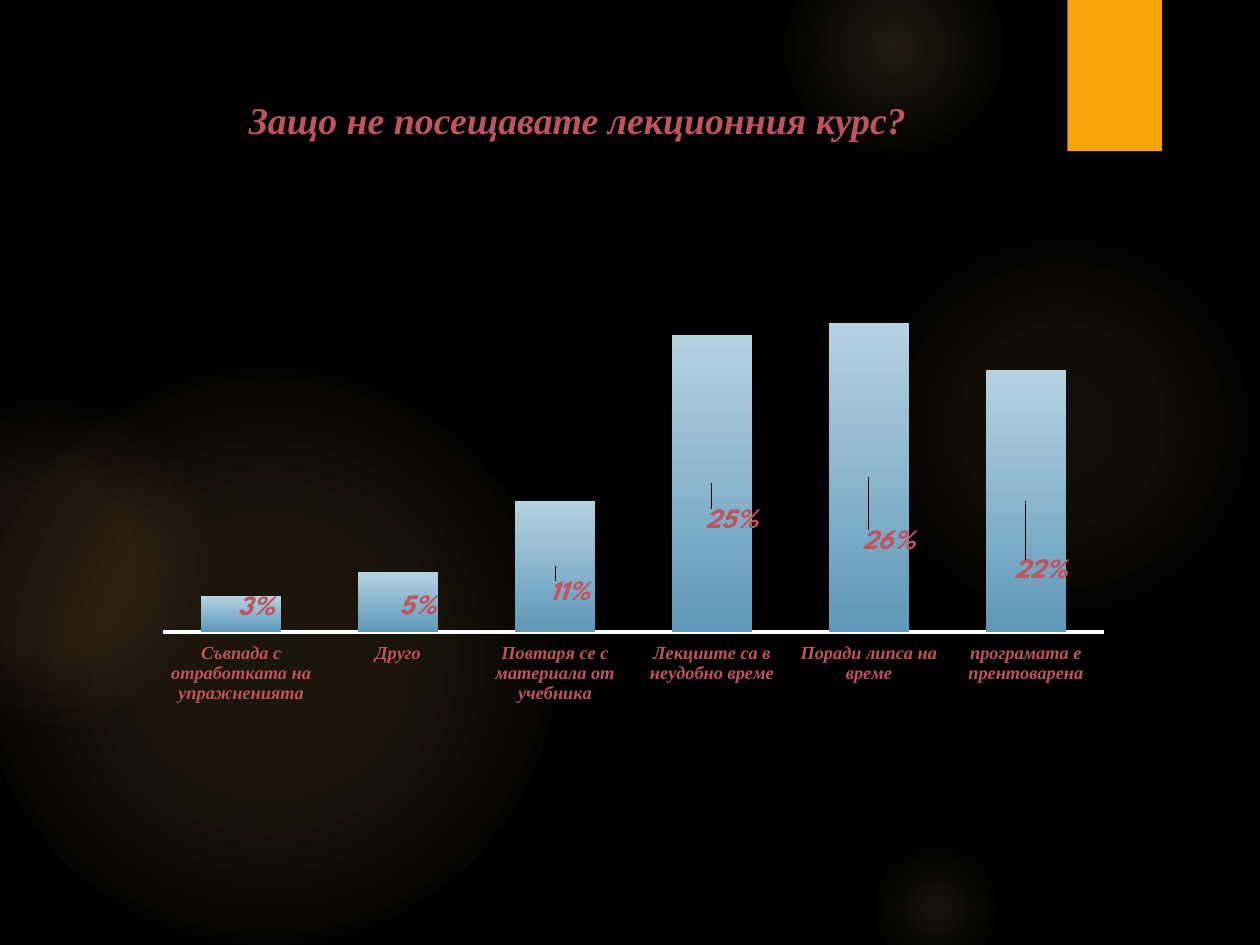
from dataclasses import dataclass

from pptx import Presentation
from pptx.chart.data import CategoryChartData
from pptx.dml.color import RGBColor
from pptx.enum.chart import XL_CHART_TYPE, XL_TICK_LABEL_POSITION, XL_TICK_MARK
from pptx.enum.shapes import MSO_SHAPE
from pptx.enum.text import MSO_ANCHOR, PP_ALIGN
from pptx.oxml import parse_xml
from pptx.oxml.ns import nsdecls
from pptx.util import Pt


@dataclass(frozen=True)
class Theme:
    background: str = "000000"
    accent: str = "F5A408"
    glow: str = "FAC96A"
    text: str = "C0545E"
    axis: str = "FFFFFF"
    bar_top: str = "B5D2E1"
    bar_bottom: str = "5F98B8"
    serif: str = "Times New Roman"
    display: str = "League Spartan"
    title_size: float = 21.6
    chart_size: float = 18
    label_size: float = 16
    category_size: float = 10.5


THEME = Theme()

# Left, top, diameter, then (position %, opacity %) from the centre outwards
GLOWS = [
    (496, 132, 222, [(0, 7), (36, 6), (69, 0)]),
    (448, -36, 126, [(0, 14), (36, 7), (73, 0)]),
    (496, 480, 78, [(0, 10), (31, 5), (66, 0)]),
    (-12, 210, 330, [(0, 11), (36, 10), (75, 0)]),
    (-66, 228, 186, [(0, 8), (36, 8), (72, 0)]),
]

# Reason, share, label offset as a fraction of the chart size
REASONS = [
    ("Съвпада с отработката на упражненията", 0.03, (0.015, -0.01)),
    ("Друго", 0.05, (0.02, 0.01)),
    ("Повтаря се с материала от учебника", 0.11, (0.015, 0.05)),
    ("Лекциите са в неудобно време", 0.25, (0.02, 0.07)),
    ("Поради липса на време", 0.26, (0.02, 0.12)),
    ("програмата е прентоварена", 0.22, (0.015, 0.13)),
]


def rgb(color):
    return RGBColor.from_string(color)


def style_font(font, name, size, color, emphasis=True):
    font.name = name
    font.size = Pt(size)
    font.color.rgb = rgb(color)
    font.bold = font.italic = emphasis


def manual_layout(**settings):
    parts = "".join(f'<c:{key} val="{value}"/>' for key, value in settings.items())
    return parse_xml(f'<c:layout {nsdecls("c")}><c:manualLayout>{parts}'
                     '</c:manualLayout></c:layout>')


def add_plain_shape(slide, kind, box):
    shape = slide.shapes.add_shape(kind, *map(Pt, box))
    shape.shadow.inherit = False
    shape.line.fill.background()
    return shape


def add_glow(slide, box, stops):
    glow = add_plain_shape(slide, MSO_SHAPE.OVAL, box)
    glow.fill.background()
    stop_xml = "".join(
        f'<a:gs pos="{position * 1000}"><a:srgbClr val="{THEME.glow}">'
        f'<a:alpha val="{opacity * 1000}"/></a:srgbClr></a:gs>'
        for position, opacity in stops)
    gradient = parse_xml(
        f'<a:gradFill {nsdecls("a")}><a:gsLst>{stop_xml}</a:gsLst><a:path path="circle">'
        '<a:fillToRect l="50000" t="50000" r="50000" b="50000"/></a:path></a:gradFill>')
    properties = glow.fill._xPr
    properties.replace(properties.xpath("./a:noFill")[0], gradient)


def add_backdrop(slide):
    slide.background.fill.solid()
    slide.background.fill.fore_color.rgb = rgb(THEME.background)
    for left, top, diameter, stops in GLOWS:
        add_glow(slide, (left, top, diameter, diameter), stops)
    tab = add_plain_shape(slide, MSO_SHAPE.RECTANGLE, (610, 0, 54, 86.4))
    tab.fill.solid()
    tab.fill.fore_color.rgb = rgb(THEME.accent)


def add_title(slide, box):
    frame = slide.shapes.add_textbox(*map(Pt, box)).text_frame
    frame.word_wrap = True
    frame.vertical_anchor = MSO_ANCHOR.TOP
    frame.margin_top = Pt(6)
    frame.text = "Защо не посещавате лекционния курс?"
    question = frame.paragraphs[0]
    question.alignment = PP_ALIGN.CENTER
    style_font(question.runs[0].font, THEME.serif, THEME.title_size, THEME.text)


def style_axes(chart):
    shares = chart.value_axis
    shares.minimum_scale, shares.maximum_scale = 0, 0.3
    shares.has_major_gridlines = False
    shares.tick_labels.number_format = "0%"
    shares.tick_labels.number_format_is_linked = False
    shares.visible = False

    reasons = chart.category_axis
    reasons.major_tick_mark = reasons.minor_tick_mark = XL_TICK_MARK.NONE
    reasons.tick_label_position = XL_TICK_LABEL_POSITION.LOW
    reasons.format.line.color.rgb = rgb(THEME.axis)
    reasons.format.line.width = Pt(2.25)
    style_font(reasons.tick_labels.font, THEME.serif, THEME.category_size, THEME.text)


def style_bars(bars):
    fill = bars.format.fill
    fill.gradient()
    fill.gradient_angle = 90
    for stop, color in zip(fill.gradient_stops, (THEME.bar_bottom, THEME.bar_top)):
        stop.color.rgb = rgb(color)


def add_bar_labels(bars):
    labels = bars.data_labels
    labels.show_value = True
    labels.number_format = "0%"
    labels.number_format_is_linked = False
    style_font(labels.font, THEME.display, THEME.label_size, THEME.text)
    for index in range(len(REASONS)):
        style_font(bars.points[index].data_label.font,
                   THEME.display, THEME.label_size, THEME.text)
    # Each label is shifted from the middle of its bar
    for label, (_, _, (dx, dy)) in zip(bars._element.xpath(".//c:dLbl"), REASONS):
        label.insert(1, manual_layout(x=dx, y=dy))


def add_reasons_chart(slide, box):
    data = CategoryChartData(number_format="0%")
    data.categories = [reason for reason, _, _ in REASONS]
    data.add_series("Series 1", [share for _, share, _ in REASONS])
    chart = slide.shapes.add_chart(
        XL_CHART_TYPE.COLUMN_STACKED, *map(Pt, box), data).chart
    chart.has_legend = chart.has_title = False
    style_font(chart.font, THEME.display, THEME.chart_size, THEME.axis, emphasis=False)

    plot = chart.plots[0]
    plot.gap_width, plot.overlap = 95, 100
    plot.vary_by_categories = False
    style_axes(chart)
    style_bars(plot.series[0])
    add_bar_labels(plot.series[0])

    # Fixed inner plot area
    plot_area = chart._chartSpace.xpath(".//c:plotArea")[0]
    for layout in plot_area.xpath("./c:layout"):
        plot_area.remove(layout)
    plot_area.insert(0, manual_layout(layoutTarget="inner", xMode="edge", yMode="edge",
                                      x=0.04, y=0.02, w=0.96, h=0.65))


def main():
    presentation = Presentation()
    presentation.slide_width, presentation.slide_height = Pt(720), Pt(540)
    slide = presentation.slides.add_slide(presentation.slide_layouts[6])
    add_backdrop(slide)
    add_title(slide, (36, 49, 588, 62.6))
    add_reasons_chart(slide, (70.6, 151.2, 561.6, 313.2))
    presentation.save("out.pptx")


if __name__ == "__main__":
    main()
